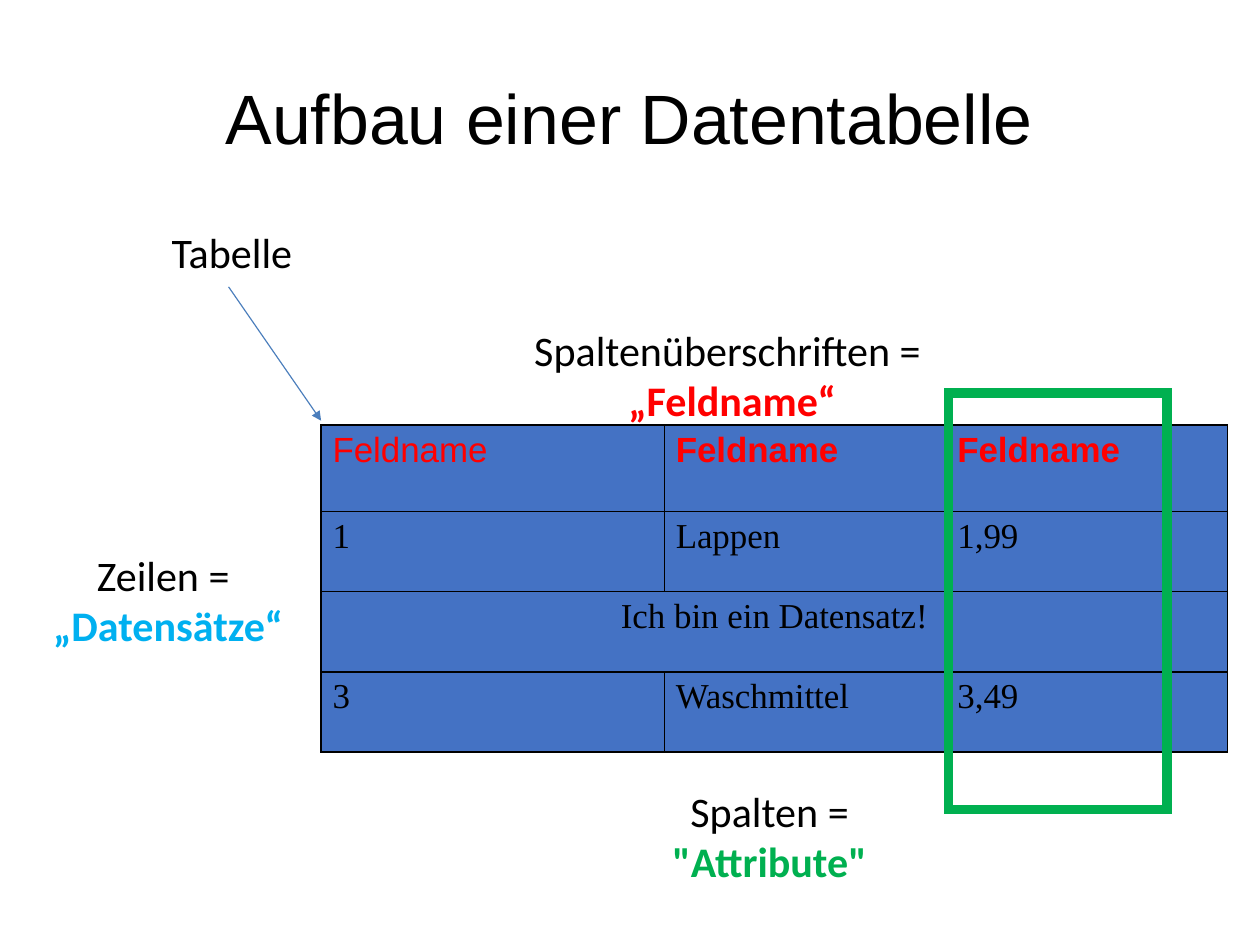
from lxml import etree
from pptx import Presentation
from pptx import util as u
from pptx.dml import color
from pptx.enum import shapes, text
from pptx.oxml import ns

COLORS = {"black": "000000", "red": "FF0000", "green": "00B050",
          "cyan": "00B0F0", "cell": "4472C4", "arrow": "4B7EBC"}
TITLE = {"name": "Arial", "size": u.Pt(44)}
LABEL = {"name": "Calibri", "size": u.Pt(26.5)}
HEADER = {"name": "Arial", "size": u.Pt(22)}
VALUE = {"name": "Times New Roman", "size": u.Pt(22)}
CENTER = text.PP_ALIGN.CENTER


def rgb(key):
    return color.RGBColor.from_string(COLORS[key])


def points(*values):
    return [u.Pt(v) for v in values]


def write(p, words, fmt, ink="black", bold=False, align=None):
    p.alignment = align
    r = p.add_run()
    r.text = words
    for name, value in {**fmt, "bold": bold}.items():
        setattr(r.font, name, value)
    r.font.color.rgb = rgb(ink)


def add_title(s, words, box):
    tf = s.shapes.add_textbox(*points(*box)).text_frame
    settings = {"word_wrap": True, "vertical_anchor": text.MSO_ANCHOR.MIDDLE,
                "margin_left": 0, "margin_right": 0,
                "margin_top": 0, "margin_bottom": 0}
    for name, value in settings.items():
        setattr(tf, name, value)
    write(tf.paragraphs[0], words, TITLE, align=CENTER)


def add_label(s, words, box, term=None, ink="black"):
    """A label, with an optional bold coloured term on a second line."""
    tf = s.shapes.add_textbox(*points(*box)).text_frame
    tf.word_wrap = True
    write(tf.paragraphs[0], words, LABEL, align=CENTER if term else None)
    if term:
        write(tf.add_paragraph(), term, LABEL, ink, True, CENTER)


def style_cell(cell):
    cell.fill.solid()
    cell.fill.fore_color.rgb = rgb("cell")
    tcPr = cell._tc.get_or_add_tcPr()
    for i, side in enumerate(("lnL", "lnR", "lnT", "lnB")):
        ln = etree.Element(ns.qn(f"a:{side}"), w=str(u.Pt(1)))
        fill = etree.SubElement(ln, ns.qn("a:solidFill"))
        etree.SubElement(fill, ns.qn("a:srgbClr"), val=COLORS["black"])
        tcPr.insert(i, ln)


def add_data_table(s, rows, box, widths, heights):
    table = s.shapes.add_table(len(rows), len(widths), *points(*box)).table
    for column, width in zip(table.columns, widths):
        column.width = u.Pt(width)
    for row, height in zip(table.rows, heights):
        row.height = u.Pt(height)
    for i, values in enumerate(rows):
        for j in range(len(widths)):
            style_cell(table.cell(i, j))
        # A single value spans the whole row
        merged = len(values) == 1
        if merged:
            table.cell(i, 0).merge(table.cell(i, len(widths) - 1))
        for j, value in enumerate(values):
            p = table.cell(i, j).text_frame.paragraphs[0]
            if i == 0:
                write(p, value, HEADER, "red", bold=j > 0)
            else:
                write(p, value, VALUE, align=CENTER if merged else None)


def style_line(sp, ink, width, tag, **attributes):
    """Colour and width, plus one line detail such as a join or an arrowhead."""
    sp.line.color.rgb = rgb(ink)
    sp.line.width = u.Pt(width)
    ln = sp._element.spPr.find(ns.qn("a:ln"))
    etree.SubElement(ln, ns.qn(tag), **attributes)


def add_frame(s, box, ink, width):
    sp = s.shapes.add_shape(shapes.MSO_SHAPE.RECTANGLE, *points(*box))
    sp.shadow.inherit = False
    sp.fill.background()
    style_line(sp, ink, width, "a:miter", lim="800000")


def add_arrow(s, start, end, ink, width):
    sp = s.shapes.add_connector(shapes.MSO_CONNECTOR.STRAIGHT,
                                *points(*start, *end))
    style_line(sp, ink, width, "a:tailEnd", type="triangle")
    etree.SubElement(sp._element.spPr, ns.qn("a:effectLst"))


def main():
    prs = Presentation()
    prs.slide_width, prs.slide_height = points(793.75, 595.25)
    s = prs.slides.add_slide(prs.slide_layouts[6])

    add_title(s, "Aufbau einer Datentabelle", (39.6, 23.7, 714.2, 99.4))

    # Labels below the table
    add_label(s, "Spalten =", (415.4, 491, 139, 71.3), '"Attribute"', "green")

    # Data table
    rows = [["Feldname"] * 3,
            ["1", "Lappen", "1,99"],
            ["Ich bin ein Datensatz!"],
            ["3", "Waschmittel", "3,49"]]
    add_data_table(s, rows, (202.3, 267.8, 571, 206),
                   (216.2, 177.4, 177.4), (54.6, 50.4, 50.4, 50.4))

    # Labels beside and above the table
    add_label(s, "Zeilen = ", (25.6, 342.4, 160.6, 71.3), "„Datensätze“", "cyan")
    add_label(s, "Spaltenüberschriften = ", (328.2, 200.6, 266.4, 71.3),
              "„Feldname“", "red")

    # Column frame, table arrow and its label
    add_frame(s, (597.6, 247.4, 137.5, 262.6), "green", 6)
    add_arrow(s, (144, 180.7), (202.3, 265), "arrow", 0.75)
    add_label(s, "Tabelle", (101, 139, 115.2, 39.6))

    prs.save("out.pptx")


if __name__ == "__main__":
    main()
